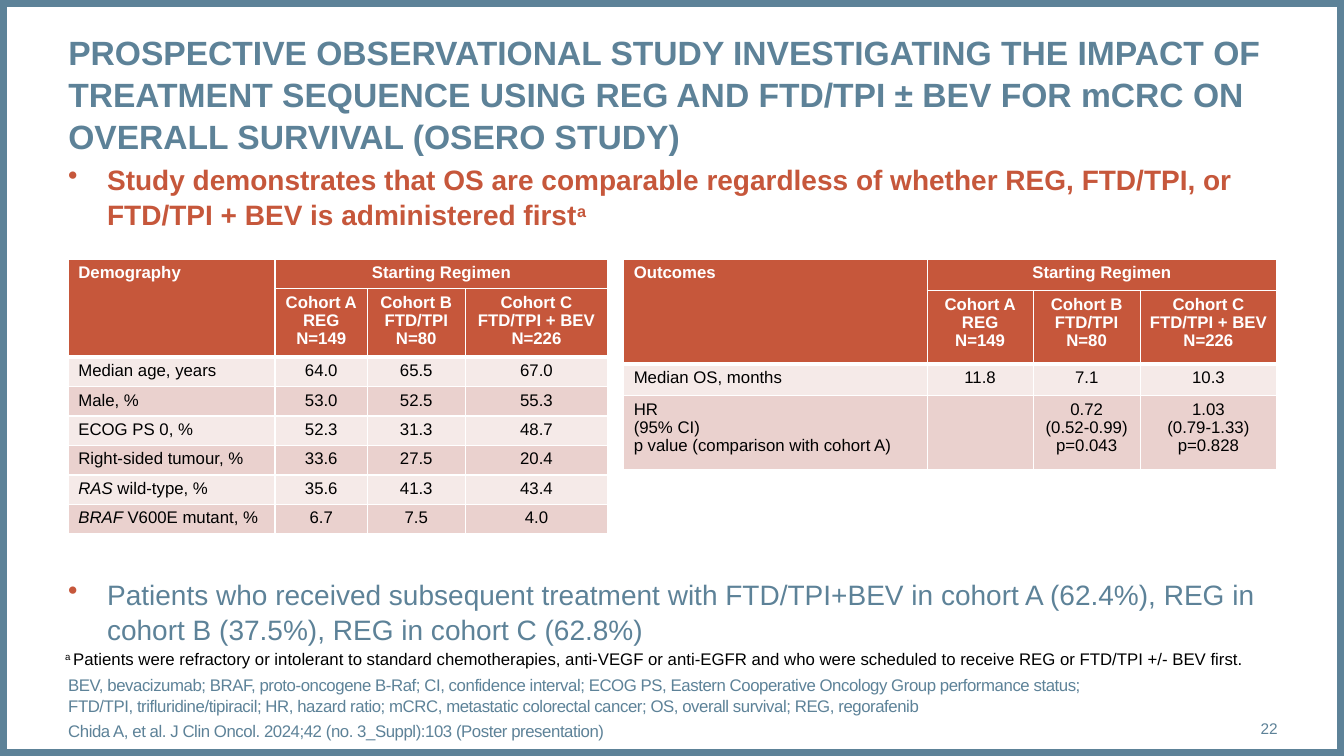
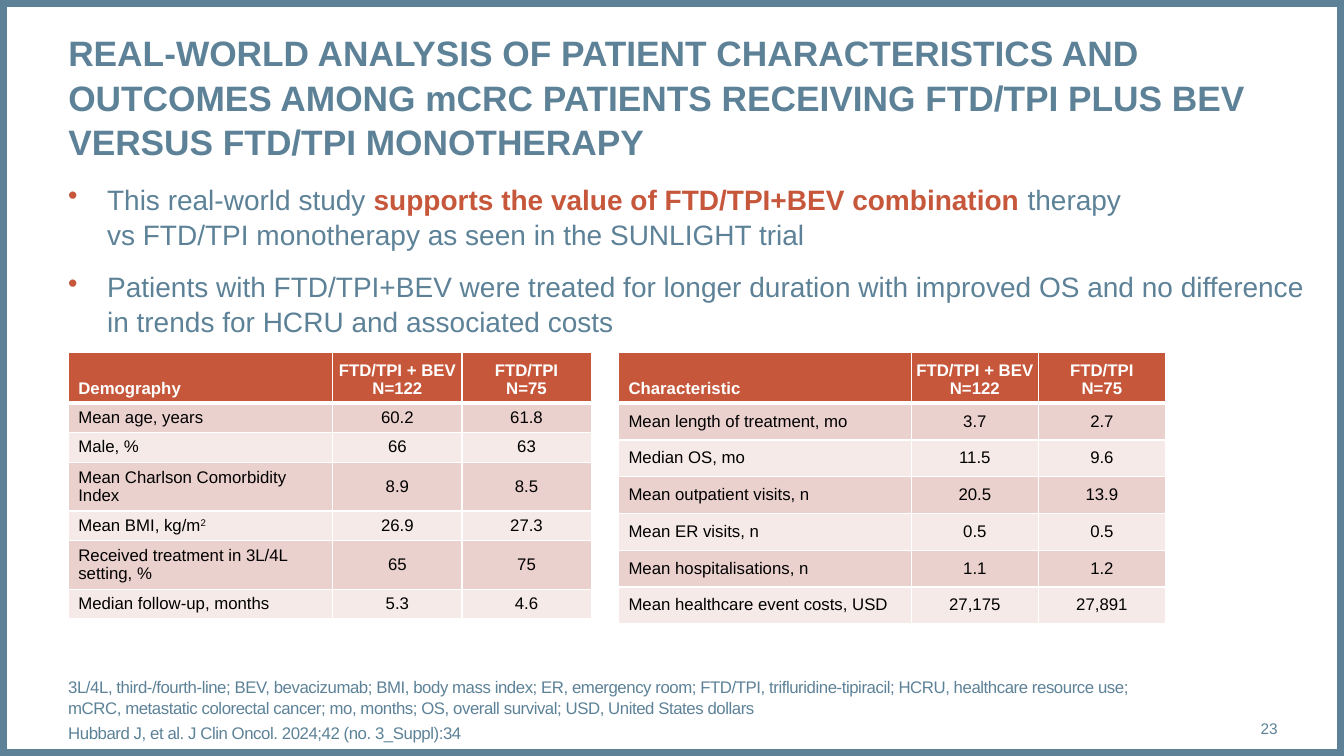
from dataclasses import dataclass
from lxml.etree import SubElement
from pptx import Presentation
from pptx.dml.color import RGBColor as Rgb
from pptx.enum.shapes import MSO_SHAPE as Shape
from pptx.enum.text import MSO_ANCHOR as Anchor, PP_ALIGN as Align
from pptx.oxml.ns import qn
from pptx.util import Pt


@dataclass(frozen=True)
class Theme:
    """Colours, font and type sizes shared by the slides."""
    slate: str = "5D8298"
    rust: str = "C6573B"
    white: str = "FFFFFF"
    black: str = "000000"
    tints: tuple = ("F5EAE8", "EAD1CE")
    font: str = "Arial"
    body: int = 20
    small: int = 12
    page: int = 11
    lead: float = 1.05
    tight: float = 0.96


THEME = Theme()
WIDE, HIGH = 1280, 720
LEFT = 65
INDENT = 37


def px(size):
    """Turn pixels into EMU."""
    return size * 9525


def paint(run, size, color, bold=False, kind="", track=0):
    """Style one run; kind may hold key, italic or sup."""
    font = run.font
    font.name, font.size = THEME.font, Pt(size)
    font.bold = bold or "key" in kind
    font.italic = "italic" in kind
    font.color.rgb = Rgb.from_string(THEME.rust if "key" in kind else color)
    props = run._r.get_or_add_rPr()
    if "sup" in kind:
        props.set("baseline", "30000")
    if track:
        props.set("spc", str(track))


def fill_para(para, parts, **look):
    """Add the parts, text or (text, kind), run by run."""
    for part in [parts] if isinstance(parts, str) else parts:
        text, kind = (part, "") if isinstance(part, str) else part
        for row, line in enumerate(text.split("\n")):
            if row:
                para.add_line_break()
            if line:
                run = para.add_run()
                run.text = line
                paint(run, kind=kind, **look)


def add_dot(para):
    """Give a paragraph a rust bullet and a hanging indent."""
    props = para._p.get_or_add_pPr()
    props.set("marL", str(px(INDENT)))
    props.set("indent", str(-px(INDENT)))
    tone = SubElement(props, qn("a:buClr"))
    SubElement(tone, qn("a:srgbClr")).set("val", THEME.rust)
    SubElement(props, qn("a:buChar")).set("char", "•")


def add_text(slide, box, paras, size, color=THEME.slate, dots=False, gap=0,
             lead=THEME.lead, align=Align.LEFT, anchor=Anchor.TOP, **look):
    """Add a text box without insets."""
    frame = slide.shapes.add_textbox(*map(px, box)).text_frame
    frame.word_wrap = True
    frame.vertical_anchor = anchor
    frame.margin_left = frame.margin_right = 0
    frame.margin_top = frame.margin_bottom = 0
    for row, parts in enumerate(paras):
        para = frame.add_paragraph() if row else frame.paragraphs[0]
        para.alignment, para.line_spacing = align, lead
        if row:
            para.space_before = Pt(gap)
        if dots:
            add_dot(para)
        fill_para(para, parts, size=size, color=color, **look)


def add_list(slide, top, high, paras):
    """Add a bulleted list."""
    add_text(slide, (LEFT, top, 1196, high), paras, THEME.body, dots=True, gap=12)


def add_edge(cell, side, width):
    """Draw one white cell border."""
    line = SubElement(cell._tc.get_or_add_tcPr(), qn("a:ln" + side))
    line.set("w", str(Pt(width)))
    solid = SubElement(line, qn("a:solidFill"))
    SubElement(solid, qn("a:srgbClr")).set("val", THEME.white)


def fill_cell(cell, parts, row, col, heads, anchor):
    """Style and fill one cell."""
    head = row < heads
    last = row == heads - 1 or head and col == 0
    for side, thick in zip("LRTB", (False, False, row == heads, last)):
        add_edge(cell, side, 3 if thick else 1)
    cell.fill.solid()
    cell.fill.fore_color.rgb = Rgb.from_string(
        THEME.rust if head else THEME.tints[row % 2])
    cell.vertical_anchor = anchor
    if col:
        cell.margin_left = cell.margin_right = 0
    para = cell.text_frame.paragraphs[0]
    para.alignment = Align.CENTER if col else Align.LEFT
    para.line_spacing = THEME.tight
    fill_para(para, parts, size=THEME.small, bold=head,
              color=THEME.white if head else THEME.black)


def add_grid(slide, left, top, cols, highs, rows, heads=1):
    """Add a table; two header rows get merged titles."""
    frame = slide.shapes.add_table(len(rows), len(cols), px(left), px(top),
                                   px(sum(cols)), px(sum(highs)))
    table = frame.table
    table.first_row = table.horz_banding = False
    for col, wide in zip(table.columns, cols):
        col.width = px(wide)
    for row, high in zip(table.rows, highs):
        row.height = px(high)
    for row, cells in enumerate(rows):
        anchor = Anchor.MIDDLE
        if heads == 2:
            anchor = Anchor.TOP
        elif row == 0:
            anchor = Anchor.BOTTOM
        for col, parts in enumerate(cells):
            fill_cell(table.cell(row, col), parts, row, col, heads, anchor)
    if heads == 2:
        table.cell(0, 0).merge(table.cell(1, 0))
        table.cell(0, 1).merge(table.cell(0, len(cols) - 1))


def add_slide(deck, title, size, notes, base, page):
    """Add a slide with frame, title, references and page number."""
    slide = deck.slides.add_slide(deck.slide_layouts[6])
    frame = slide.shapes.add_shape(Shape.RECTANGLE, 0, 0, px(WIDE), px(HIGH))
    frame.shadow.inherit = False
    frame.fill.background()
    frame.line.color.rgb = Rgb.from_string(THEME.slate)
    frame.line.width = Pt(10)
    add_text(slide, (LEFT, 28, 1172, 116), [title], size, bold=True)
    add_text(slide, (LEFT, base - 62, 1068, 62), notes, THEME.small, gap=3,
             anchor=Anchor.BOTTOM, track=-30)
    add_text(slide, (1134, 675, 83, 38), [page], THEME.page, lead=1.0,
             align=Align.RIGHT, anchor=Anchor.MIDDLE)
    return slide


def add_osero(deck):
    """Build the treatment sequence slide."""
    slide = add_slide(
        deck,
        "PROSPECTIVE OBSERVATIONAL STUDY INVESTIGATING THE IMPACT OF TREATMENT "
        "SEQUENCE USING REG AND FTD/TPI ± BEV FOR mCRC ON OVERALL SURVIVAL "
        "(OSERO STUDY)", 24,
        ["BEV, bevacizumab; BRAF, proto-oncogene B-Raf; CI, confidence interval; "
         "ECOG PS, Eastern Cooperative Oncology Group performance status;\n"
         "FTD/TPI, trifluridine/tipiracil; HR, hazard ratio; mCRC, metastatic "
         "colorectal cancer; OS, overall survival; REG, regorafenib",
         "Chida A, et al. J Clin Oncol. 2024;42 (no. 3_Suppl):103 "
         "(Poster presentation)"], 706, "22")
    add_list(slide, 153, 66, [[
        ("Study demonstrates that OS are comparable regardless of whether REG, "
         "FTD/TPI, or FTD/TPI + BEV is administered first", "key"),
        ("a", "key sup")]])
    arms = ["", "Cohort A\nREG\nN=149", "Cohort B\nFTD/TPI\nN=80",
            "Cohort C\nFTD/TPI + BEV\nN=226"]
    add_grid(slide, LEFT, 247, [197, 88, 93, 136], [27, 64] + [27] * 6, [
        ["Demography", "Starting Regimen", "", ""],
        arms,
        ["Median age, years", "64.0", "65.5", "67.0"],
        ["Male, %", "53.0", "52.5", "55.3"],
        ["ECOG PS 0, %", "52.3", "31.3", "48.7"],
        ["Right-sided tumour, %", "33.6", "27.5", "20.4"],
        [[("RAS", "italic"), " wild-type, %"], "35.6", "41.3", "43.4"],
        [[("BRAF ", "italic"), "V600E mutant, %"], "6.7", "7.5", "4.0"],
    ], heads=2)
    add_grid(slide, 594, 247, [289, 101, 102, 130], [30, 70] * 2, [
        ["Outcomes", "Starting Regimen", "", ""],
        arms,
        ["Median OS, months", "11.8", "7.1", "10.3"],
        ["HR\n(95% CI)\np value (comparison with cohort A)", "",
         "0.72\n(0.52-0.99)\np=0.043", "1.03\n(0.79-1.33)\np=0.828"],
    ], heads=2)
    add_list(slide, 548, 66, [
        "Patients who received subsequent treatment with FTD/TPI+BEV in cohort A "
        "(62.4%), REG in\ncohort B (37.5%), REG in cohort C (62.8%)"])
    add_text(slide, (62, 618, 1145, 20), [[
        ("a ", "sup"),
        "Patients were refractory or intolerant to standard chemotherapies, "
        "anti-VEGF or anti-EGFR and who were scheduled to receive REG or "
        "FTD/TPI +/- BEV first."]], THEME.small, THEME.black, lead=1.0)


def add_real(deck):
    """Build the real-world analysis slide."""
    slide = add_slide(
        deck,
        "REAL-WORLD ANALYSIS OF PATIENT CHARACTERISTICS AND OUTCOMES AMONG mCRC "
        "PATIENTS RECEIVING FTD/TPI PLUS BEV VERSUS FTD/TPI MONOTHERAPY", 25.2,
        ["3L/4L, third-/fourth-line; BEV, bevacizumab; BMI, body mass index; ER, "
         "emergency room; FTD/TPI, trifluridine-tipiracil; HCRU, healthcare "
         "resource use;\nmCRC, metastatic colorectal cancer; mo, months; OS, "
         "overall survival; USD, United States dollars",
         "Hubbard J, et al. J Clin Oncol. 2024;42 (no. 3_Suppl):34"], 708, "23")
    add_list(slide, 172, 156, [
        ["This real-world study ",
         ("supports the value of FTD/TPI+BEV combination ", "key"),
         "therapy\nvs FTD/TPI monotherapy as seen in the SUNLIGHT trial"],
        "Patients with FTD/TPI+BEV were treated for longer duration with improved "
        "OS and no difference in trends for HCRU and associated costs"])
    arms = ["FTD/TPI + BEV\nN=122", "FTD/TPI\nN=75"]
    add_grid(slide, LEFT, 336, [252, 123, 123], [48, 27, 27, 45, 27, 45, 27], [
        ["Demography", *arms],
        ["Mean age, years", "60.2", "61.8"],
        ["Male, %", "66", "63"],
        ["Mean Charlson Comorbidity Index", "8.9", "8.5"],
        [["Mean BMI, kg/m", ("2", "sup")], "26.9", "27.3"],
        ["Received treatment in 3L/4L setting, %", "65", "75"],
        ["Median follow-up, months", "5.3", "4.6"],
    ])
    add_grid(slide, 589, 336, [279, 121, 121], [48] + [35] * 6, [
        ["Characteristic", *arms],
        ["Mean length of treatment, mo", "3.7", "2.7"],
        ["Median OS, mo", "11.5", "9.6"],
        ["Mean outpatient visits, n", "20.5", "13.9"],
        ["Mean ER visits, n", "0.5", "0.5"],
        ["Mean hospitalisations, n", "1.1", "1.2"],
        ["Mean healthcare event costs, USD", "27,175", "27,891"],
    ])


def main():
    """Build and save the deck."""
    deck = Presentation()
    deck.slide_width, deck.slide_height = px(WIDE), px(HIGH)
    add_osero(deck)
    add_real(deck)
    deck.save("out.pptx")


if __name__ == "__main__":
    main()
